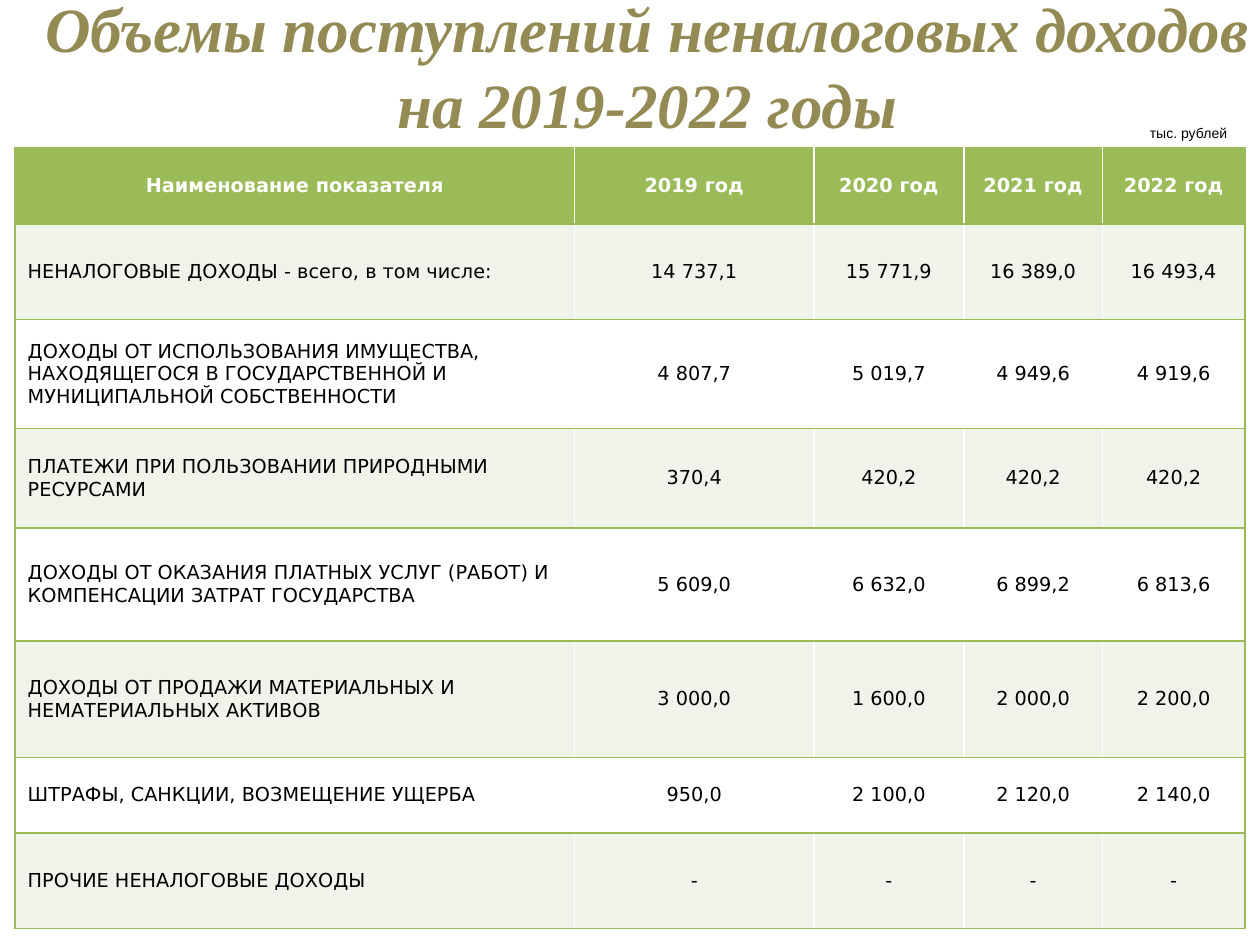
from lxml import etree
from pptx import Presentation
from pptx.dml.color import RGBColor
from pptx.enum.text import MSO_ANCHOR, MSO_AUTO_SIZE, PP_ALIGN
from pptx.oxml.ns import qn
from pptx.util import Inches, Pt

LEFT, CENTER, RIGHT = PP_ALIGN.LEFT, PP_ALIGN.CENTER, PP_ALIGN.RIGHT
MIDDLE = MSO_ANCHOR.MIDDLE
NO_AUTOFIT = MSO_AUTO_SIZE.NONE
TITLE_ONLY = 5

GREEN, PALE, WHITE, BLACK, OLIVE = "9BBB59", "EFF3EA", "FFFFFF", "000000", "948A54"

TITLE_BOX = (-0.59, 0.21, 10.67, 0.62)
UNIT_BOX = (9.01, 0.94, 0.83, 0.24)
TABLE_BOX = (0.12, 1.17, 9.76, 6.2)
COLUMN_WEIGHTS = (4.44, 1.9, 1.19, 1.1, 1.13)
ROW_WEIGHTS = (0.61, 0.76, 0.87, 0.79, 0.9, 0.93, 0.6, 0.76)

REVENUE_ROWS = (
    ("Наименование показателя", "2019 год", "2020 год", "2021 год", "2022 год"),
    ("НЕНАЛОГОВЫЕ ДОХОДЫ - всего, в том числе:",
     "14 737,1", "15 771,9", "16 389,0", "16 493,4"),
    ("ДОХОДЫ ОТ ИСПОЛЬЗОВАНИЯ ИМУЩЕСТВА, НАХОДЯЩЕГОСЯ В ГОСУДАРСТВЕННОЙ И "
     "МУНИЦИПАЛЬНОЙ СОБСТВЕННОСТИ", "4 807,7", "5 019,7", "4 949,6", "4 919,6"),
    ("ПЛАТЕЖИ ПРИ ПОЛЬЗОВАНИИ ПРИРОДНЫМИ РЕСУРСАМИ",
     "370,4", "420,2", "420,2", "420,2"),
    ("ДОХОДЫ ОТ ОКАЗАНИЯ ПЛАТНЫХ УСЛУГ (РАБОТ) И КОМПЕНСАЦИИ ЗАТРАТ ГОСУДАРСТВА",
     "5 609,0", "6 632,0", "6 899,2", "6 813,6"),
    ("ДОХОДЫ ОТ ПРОДАЖИ МАТЕРИАЛЬНЫХ И НЕМАТЕРИАЛЬНЫХ АКТИВОВ",
     "3 000,0", "1 600,0", "2 000,0", "2 200,0"),
    ("ШТРАФЫ, САНКЦИИ, ВОЗМЕЩЕНИЕ УЩЕРБА",
     "950,0", "2 100,0", "2 120,0", "2 140,0"),
    ("ПРОЧИЕ НЕНАЛОГОВЫЕ ДОХОДЫ", "-", "-", "-", "-"),
)


def color(value):
    """Turn a hex string into a colour."""
    return RGBColor.from_string(value)


def write_text(frame, text, *, font, size, fill, align=LEFT, bold=False, italic=False):
    """Write one formatted paragraph into a text frame and return it."""
    paragraph = frame.paragraphs[0]
    paragraph.alignment = align
    run = paragraph.add_run()
    run.text = text
    run.font.name = font
    run.font.size = Pt(size)
    run.font.bold = bold
    run.font.italic = italic
    run.font.color.rgb = color(fill)
    return paragraph


def add_borders(cell, sides):
    """Draw green one-point borders on the given sides of a cell."""
    properties = cell._tc.get_or_add_tcPr()
    for side in sides:
        line = etree.SubElement(properties, qn(f"a:ln{side}"), w=str(Pt(1)))
        solid = etree.SubElement(line, qn("a:solidFill"))
        etree.SubElement(solid, qn("a:srgbClr"), val=GREEN)


def add_title(slide, box):
    """Place the slide title in the title placeholder."""
    title = slide.shapes.title
    title.left, title.top, title.width, title.height = map(Inches, box)
    frame = title.text_frame
    frame.word_wrap = True
    frame.auto_size = NO_AUTOFIT
    frame.vertical_anchor = MIDDLE
    paragraph = write_text(
        frame, "Объемы поступлений неналоговых доходов на 2019-2022 годы",
        font="Times New Roman", size=36, fill=OLIVE, align=CENTER, bold=True, italic=True)
    properties = paragraph._p.get_or_add_pPr()
    properties.set("marL", str(Inches(0.78)))
    properties.set("indent", "0")


def add_unit_label(slide, box):
    """Place the unit of measure above the table."""
    frame = slide.shapes.add_textbox(*map(Inches, box)).text_frame
    frame.word_wrap = False
    write_text(frame, "тыс. рублей", font="Arial", size=8, fill=BLACK, align=RIGHT)


def fill_cell(cell, text, row, column):
    """Format one table cell according to its row and column."""
    header, first = row == 0, column == 0
    last = column == len(COLUMN_WEIGHTS) - 1
    add_borders(cell, "L" * first + "R" * last + "TB")
    cell.fill.solid()
    cell.fill.fore_color.rgb = color(GREEN if header else PALE if row % 2 else WHITE)
    cell.vertical_anchor = MIDDLE
    write_text(cell.text_frame, text, font="DejaVu Sans", size=11,
               fill=WHITE if header else BLACK, bold=header,
               align=LEFT if first and not header else CENTER)


def add_revenue_table(slide, box):
    """Place the revenue table, sharing the box among columns and rows."""
    table = slide.shapes.add_table(
        len(ROW_WEIGHTS), len(COLUMN_WEIGHTS), *map(Inches, box)).table
    for column, weight in zip(table.columns, COLUMN_WEIGHTS):
        column.width = Inches(box[2] * weight / sum(COLUMN_WEIGHTS))
    for row, weight in zip(table.rows, ROW_WEIGHTS):
        row.height = Inches(box[3] * weight / sum(ROW_WEIGHTS))
    for row, texts in enumerate(REVENUE_ROWS):
        for column, text in enumerate(texts):
            fill_cell(table.cell(row, column), text, row, column)


def main():
    """Build and save the presentation."""
    presentation = Presentation()
    presentation.slide_width = Inches(10)
    presentation.slide_height = Inches(7.5)
    slide = presentation.slides.add_slide(presentation.slide_layouts[TITLE_ONLY])
    add_revenue_table(slide, TABLE_BOX)
    add_unit_label(slide, UNIT_BOX)
    add_title(slide, TITLE_BOX)
    presentation.save("out.pptx")


if __name__ == "__main__":
    main()
